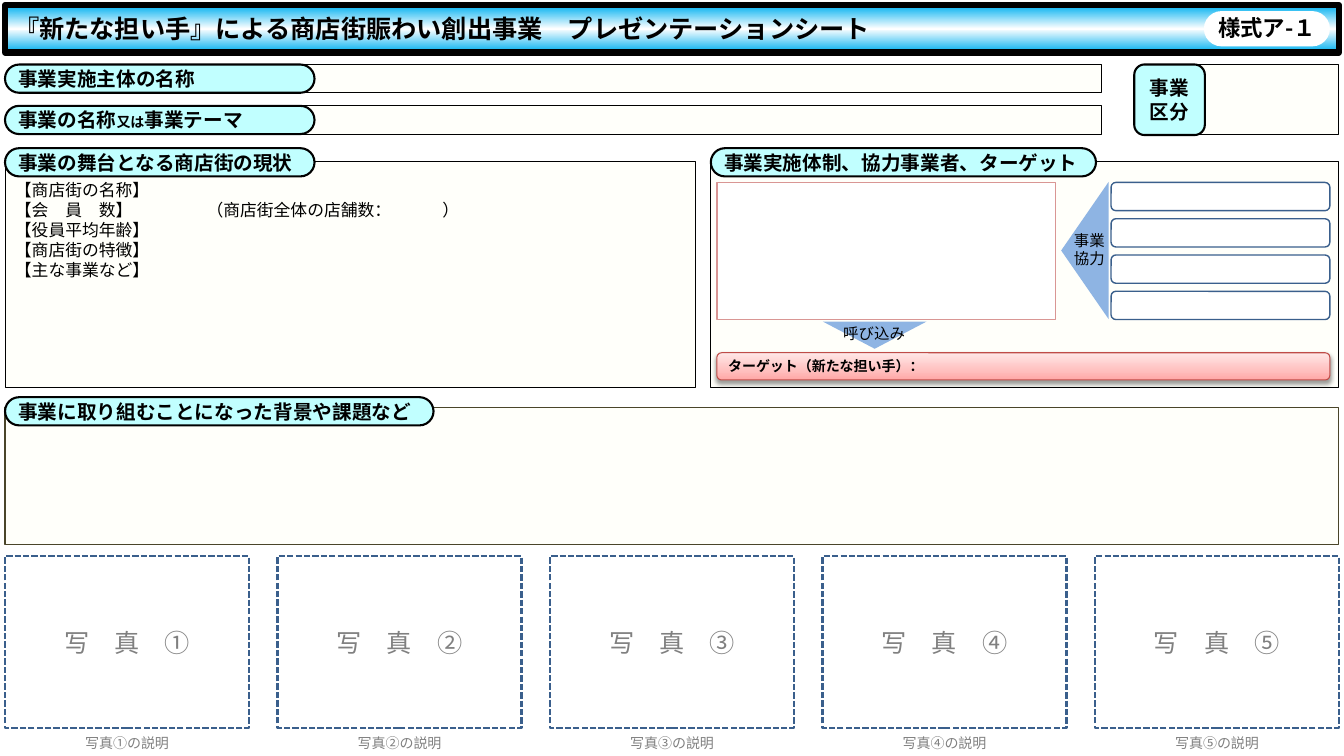
from dataclasses import dataclass
from lxml import etree
from pptx import Presentation
from pptx.dml.color import RGBColor
from pptx.enum.dml import MSO_LINE
from pptx.enum.shapes import MSO_SHAPE
from pptx.enum.text import MSO_ANCHOR, MSO_AUTO_SIZE, PP_ALIGN
from pptx.oxml import parse_xml
from pptx.oxml.ns import nsdecls, qn
from pptx.util import Inches, Pt

RECT, ROUND, TRIANGLE = MSO_SHAPE.RECTANGLE, MSO_SHAPE.ROUNDED_RECTANGLE, MSO_SHAPE.ISOSCELES_TRIANGLE
LEFT, CENTER = PP_ALIGN.LEFT, PP_ALIGN.CENTER
TOP, MIDDLE = MSO_ANCHOR.TOP, MSO_ANCHOR.MIDDLE
DASH = MSO_LINE.SQUARE_DOT


@dataclass(frozen=True)
class Theme:
    font: str = "Noto Sans CJK JP"
    black: str = "000000"
    white: str = "FFFFFF"
    grey: str = "808080"
    panel: str = "FFFFFA"
    olive: str = "4A452A"
    label: str = "C1FFFF"
    blue: str = "3A5F8C"
    arrow: str = "8EB4E3"
    rose: str = "D99694"
    red: str = "BF4C48"
    banner_stops: tuple = ((0, "00B0F0"), (50, "FFFFFF"), (100, "00B0F0"))
    target_stops: tuple = ((0, "FFA6A5"), (35, "FFC0BF"), (100, "FFE7E7"))
    title: int = 18
    badge: int = 16
    heading: int = 14
    body: int = 12
    arrow_text: int = 11
    small: int = 10


THEME = Theme()
TITLE = "『新たな担い手』による商店街賑わい創出事業　プレゼンテーションシート"
FORM_CODE = "様式ア-１"
FIELDS = ["事業実施主体の名称", ("事業の名称", "又は", "事業テーマ")]
CATEGORY = ["事業", "区分"]
STATUS_HEADING = "事業の舞台となる商店街の現状"
STATUS_LINES = [
    "【商店街の名称】",
    "【会　員　数】\t（商店街全体の店舗数：\t）",
    "【役員平均年齢】",
    "【商店街の特徴】",
    "【主な事業など】",
]
STATUS_TABS = (1.9, 4.24)
SYSTEM_HEADING = "事業実施体制、協力事業者、ターゲット"
COOPERATION = ["事業", "協力"]
INVITATION = "呼び込み"
TARGET = "ターゲット（新たな担い手）："
BACKGROUND_HEADING = "事業に取り組むことになった背景や課題など"
PHOTOS = "①②③④⑤"
PARTNER_COUNT = 4

WIDTH, HEIGHT = 13.33, 7.5
MARGIN = 0.05
FULL = WIDTH - 2 * MARGIN
RIGHT = MARGIN + FULL
ROW = 0.28
LABEL_WIDTH = 3.07
FIELD_TOP, FIELD_PITCH = 0.64, 0.41
FIELD_RIGHT = 10.93
PANEL_TOP, PANEL_HEIGHT = 1.6, 2.24
SYSTEM_LEFT = 7.05
INNER_LEFT, INNER_TOP, INNER_HEIGHT = 7.11, 1.81, 1.36
PARTNER_LEFT, PARTNER_WIDTH = 11.02, 2.17
PARTNER_PITCH = (INNER_HEIGHT - ROW) / (PARTNER_COUNT - 1)
PHOTO_WIDTH, PHOTO_TOP, PHOTO_HEIGHT = 2.42, 5.52, 1.7
PHOTO_PITCH = (FULL - PHOTO_WIDTH) / (len(PHOTOS) - 1)


def color(value):
    return RGBColor.from_string(value)


def set_gradient(shape, stops, angle):
    items = "".join(
        f'<a:gs pos="{position * 1000}"><a:srgbClr val="{value}"/></a:gs>' for position, value in stops
    )
    gradient = parse_xml(
        f'<a:gradFill {nsdecls("a")} rotWithShape="1"><a:gsLst>{items}</a:gsLst>'
        f'<a:lin ang="{angle * 60000}" scaled="0"/></a:gradFill>'
    )
    shape._element.spPr.find(qn("a:prstGeom")).addnext(gradient)


def set_line(shape, line):
    if line is None:
        shape.line.fill.background()
        return
    shape.line.color.rgb = color(line[0])
    shape.line.width = Pt(line[1])
    if len(line) > 2:
        shape.line.dash_style = line[2]


def add_box(at, fill=None, line=None, kind=ROUND, corner=0, rotation=0):
    shape = slide.shapes.add_shape(kind, *map(Inches, at))
    shape.shadow.inherit = False
    shape.rotation = rotation
    if kind == ROUND:
        shape.adjustments[0] = corner
    if isinstance(fill, str):
        shape.fill.solid()
        shape.fill.fore_color.rgb = color(fill)
    elif fill is None:
        shape.fill.background()
    set_line(shape, line)
    return shape


def format_run(run, size, value, bold):
    run.font.size = Pt(size)
    run.font.bold = bold
    run.font.color.rgb = color(value)
    run.font.name = THEME.font
    etree.SubElement(run._r.get_or_add_rPr(), qn("a:ea")).set("typeface", THEME.font)


def write(shape, lines, size, value=THEME.black, bold=False, align=LEFT, anchor=MIDDLE,
          insets=(0.09, 0.05, 0.09, 0.05), wrap=True):
    frame = shape.text_frame
    frame.word_wrap = wrap
    frame.auto_size = MSO_AUTO_SIZE.NONE
    frame.vertical_anchor = anchor
    frame.margin_left, frame.margin_top, frame.margin_right, frame.margin_bottom = map(Inches, insets)
    frame.text = "\n".join([lines] if isinstance(lines, str) else lines)
    for paragraph in frame.paragraphs:
        paragraph.alignment = align
        for run in paragraph.runs:
            format_run(run, size, value, bold)
    return frame


def add_label(at, text, corner=0.5, align=LEFT):
    label = add_box(at, THEME.label, (THEME.black, 1.5), corner=corner)
    return write(label, text, THEME.heading, bold=True, align=align)


def add_caption(at, text):
    caption = slide.shapes.add_textbox(*map(Inches, at))
    write(caption, text, THEME.arrow_text, align=CENTER, anchor=TOP, insets=(0.1, 0.05, 0.1, 0.05), wrap=False)


def add_banner():
    banner = slide.shapes.title
    banner.left, banner.top, banner.width, banner.height = map(Inches, (MARGIN, MARGIN, FULL, 0.47))
    banner._element.spPr.append(parse_xml(
        f'<a:prstGeom {nsdecls("a")} prst="roundRect"><a:avLst>'
        '<a:gd name="adj" fmla="val 21100"/></a:avLst></a:prstGeom>'
    ))
    set_gradient(banner, THEME.banner_stops, 90)
    set_line(banner, (THEME.black, 4.5))
    write(banner, TITLE, THEME.title, bold=True)
    badge = add_box((11.94, 0.11, 1.25, 0.35), THEME.white, corner=0.5)
    frame = write(badge, FORM_CODE, THEME.badge, bold=True, align=CENTER, insets=(0, 0.04, 0, 0))
    frame.paragraphs[0].line_spacing = Pt(15)


def add_fields():
    for index, parts in enumerate(FIELDS):
        top = FIELD_TOP + index * FIELD_PITCH
        add_box((3, top, FIELD_RIGHT - 3, ROW), THEME.panel, (THEME.black, 0.75))
        first, *rest = [parts] if isinstance(parts, str) else parts
        frame = add_label((MARGIN, top, LABEL_WIDTH, ROW), first)
        for part, size in zip(rest, (THEME.small, THEME.heading)):
            run = frame.paragraphs[0].add_run()
            run.text = part
            format_run(run, size, THEME.black, True)
    add_box((11.76, FIELD_TOP, RIGHT - 11.76, 0.69), THEME.panel, (THEME.black, 0.75))
    add_label((11.25, FIELD_TOP, 0.7, 0.7), CATEGORY, corner=0.146, align=CENTER)


def add_status():
    panel = add_box((MARGIN, PANEL_TOP, 6.85, PANEL_HEIGHT), THEME.panel, (THEME.black, 0.75))
    frame = write(panel, STATUS_LINES, THEME.body, anchor=TOP, insets=(0.1, 0.18, 0, 0.05))
    tabs = etree.SubElement(frame.paragraphs[1]._p.get_or_add_pPr(), qn("a:tabLst"))
    for position in STATUS_TABS:
        etree.SubElement(tabs, qn("a:tab"), pos=str(Inches(position)), algn="l")
    add_label((MARGIN, 1.47, LABEL_WIDTH, ROW), STATUS_HEADING)


def add_system():
    add_box((SYSTEM_LEFT, PANEL_TOP, RIGHT - SYSTEM_LEFT, PANEL_HEIGHT), THEME.panel, (THEME.black, 0.75))
    add_label((SYSTEM_LEFT, 1.47, 3.82, ROW), SYSTEM_HEADING)
    add_box((INNER_LEFT, INNER_TOP, 3.36, INNER_HEIGHT), THEME.white, (THEME.rose, 1), RECT)
    add_box((10.08, 2.25, INNER_HEIGHT, 0.47), THEME.arrow, kind=TRIANGLE, rotation=270)
    add_caption((10.55, 2.24, 0.51, 0.47), COOPERATION)
    for index in range(PARTNER_COUNT):
        top = INNER_TOP + index * PARTNER_PITCH
        add_box((PARTNER_LEFT, top, PARTNER_WIDTH, ROW), THEME.white, (THEME.blue, 1), corner=0.17)
    add_box((8.16, 3.19, 1.03, 0.27), THEME.arrow, kind=TRIANGLE, rotation=180)
    add_caption((8.26, 3.17, 0.82, 0.29), INVITATION)
    target = add_box((INNER_LEFT, 3.5, 6.08, 0.27), THEME.target_stops, (THEME.red, 0.75), corner=0.17)
    target.fill.background()
    properties = target._element.spPr
    properties.remove(properties.find(qn("a:noFill")))
    set_gradient(target, THEME.target_stops, 270)
    shadow = etree.SubElement(properties.find(qn("a:effectLst")), qn("a:outerShdw"),
                              blurRad=str(Pt(3.1)), dist=str(Pt(1.6)), dir="5400000", rotWithShape="0")
    shade = etree.SubElement(shadow, qn("a:srgbClr"), val=THEME.black)
    etree.SubElement(shade, qn("a:alpha"), val="38000")
    write(target, TARGET, THEME.small, bold=True, insets=(0.1, 0.05, 0.1, 0.05))


def add_photos():
    for index, number in enumerate(PHOTOS):
        left = MARGIN + index * PHOTO_PITCH
        frame = add_box((left, PHOTO_TOP, PHOTO_WIDTH, PHOTO_HEIGHT), THEME.white, (THEME.blue, 1.5, DASH), RECT)
        write(frame, f"写　真　{number}", THEME.title, THEME.grey, align=CENTER)
        note = add_box((left, 7.24, PHOTO_WIDTH, 0.25))
        write(note, f"写真{number}の説明", THEME.small, THEME.grey, align=CENTER)


presentation = Presentation()
presentation.slide_width, presentation.slide_height = Inches(WIDTH), Inches(HEIGHT)
slide = presentation.slides.add_slide(presentation.slide_layouts[5])
add_banner()
add_fields()
add_status()
add_system()
add_box((MARGIN, 4.04, FULL, 1.36), THEME.panel, (THEME.olive, 0.75))
add_label((MARGIN, 3.94, 4.25, ROW), BACKGROUND_HEADING)
add_photos()
presentation.save("out.pptx")
